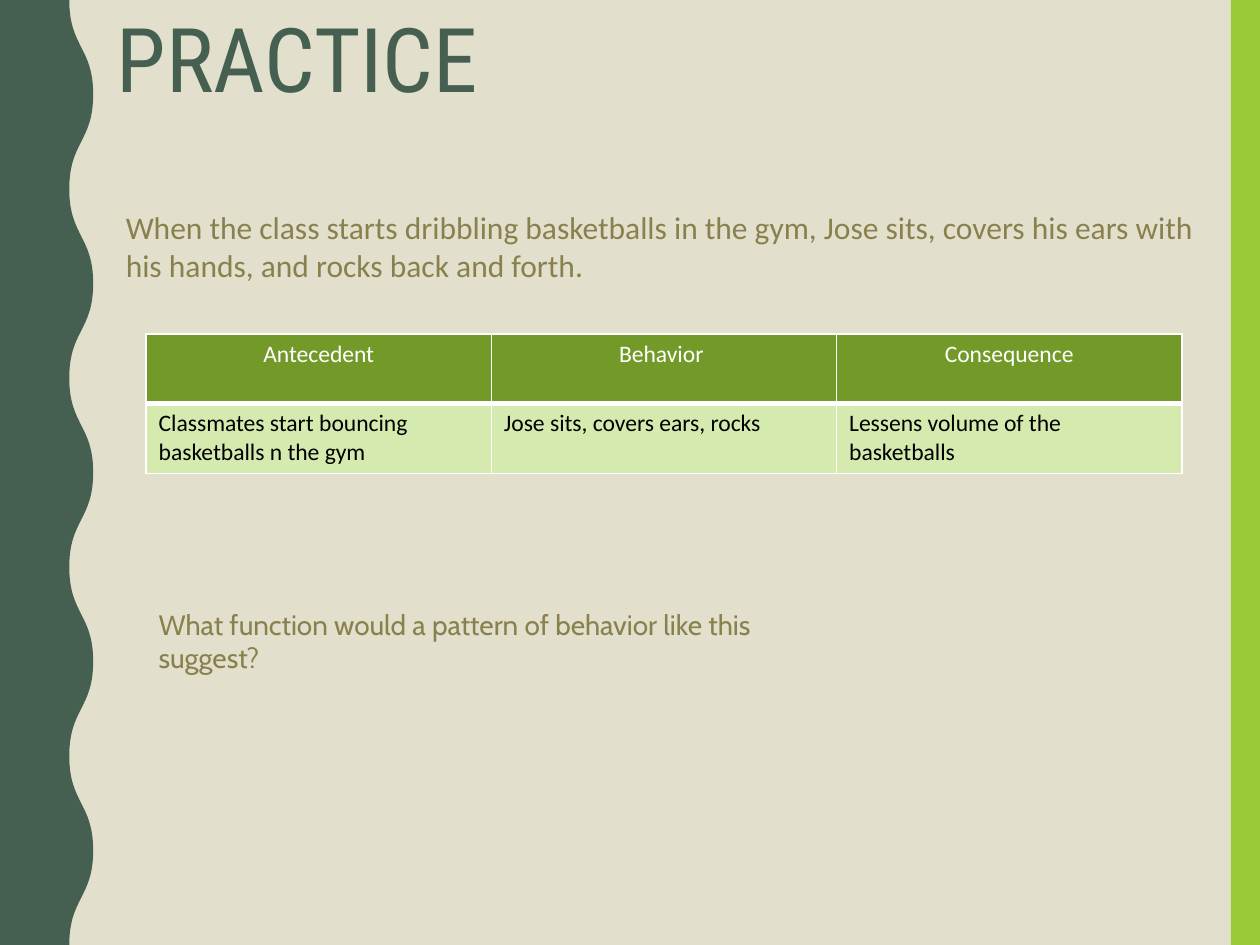
from lxml import etree
from pptx import Presentation
from pptx.dml.color import RGBColor
from pptx.enum import shapes, text
from pptx.oxml.ns import qn
from pptx.util import Inches, Pt

SLIDE_W, SLIDE_H = 10, 7.5
GREEN, LIME, OLIVE, WHITE = "455F51", "99CB38", "89814D", "FFFFFF"

# text, (left, top, width, height), size, font, colour, line spacing
TEXTS = [
    ("When the class starts dribbling basketballs in the gym, Jose sits, "
     "covers his ears with his hands, and rocks back and forth.",
     (0.9, 1.6, 8.74, 0.71), 18, "Calibri", OLIVE, None),
    ("What function would a pattern of behavior like this suggest?",
     (1.16, 4.77, 5.68, 0.37), 16, "Cabin", OLIVE, None),
    ("PRACTICE", (0.83, 0.07, 8.35, 1.63), 51, "Roboto Condensed", GREEN, 0.9),
]
ROWS = [
    ("Antecedent", "Behavior ", "Consequence"),
    ("Classmates start bouncing basketballs n the gym",
     "Jose sits, covers ears, rocks",
     "Lessens volume of the basketballs"),
]
# height, fill, font colour, alignment, bottom border width
ROW_STYLES = [
    (0.55, "739A28", WHITE, text.PP_ALIGN.CENTER, 3),
    (0.33, "D5EAAE", "000000", None, 1),
]
TABLE_LEFT, TABLE_TOP, COL_W = 1.16, 2.65, 2.74
WAVE_IN, WAVE_OUT, HALF_WAVE = 0.55, 0.74, 0.75


def rgb(value):
    return RGBColor.from_string(value)


def paint(sp, color):
    sp.shadow.inherit = False
    sp.fill.solid()
    sp.fill.fore_color.rgb = rgb(color)
    sp.line.fill.background()


def add_run(p, words, size, font, color):
    r = p.add_run()
    r.text = words
    r.font.size = Pt(size)
    r.font.name = font
    r.font.color.rgb = rgb(color)


def curve_slanted_sides(sp):
    """Turn each slanted side of a freeform into an upright S-curve."""
    x0 = y0 = 0
    for line in list(sp._element.iter(qn("a:lnTo"))):
        x, y = int(line[0].get("x")), int(line[0].get("y"))
        if x != x0 and y != y0:
            curve = etree.Element(qn("a:cubicBezTo"))
            middle = (y0 + y) // 2
            for px, py in ((x0, middle), (x, middle), (x, y)):
                etree.SubElement(curve, qn("a:pt"), x=str(px), y=str(py))
            line.getparent().replace(line, curve)
        x0, y0 = x, y


def set_borders(cell, bottom, top):
    tcPr = cell._tc.get_or_add_tcPr()
    widths = {"a:lnL": 1, "a:lnR": 1, "a:lnT": top, "a:lnB": bottom}
    for i, (tag, width) in enumerate(widths.items()):
        ln = etree.Element(qn(tag), w=str(Pt(width)))
        fill = etree.SubElement(ln, qn("a:solidFill"))
        etree.SubElement(fill, qn("a:srgbClr"), val=WHITE)
        tcPr.insert(i, ln)


prs = Presentation()
prs.slide_width, prs.slide_height = Inches(SLIDE_W), Inches(SLIDE_H)
s = prs.slides.add_slide(prs.slide_layouts[6])
s.background.fill.solid()
s.background.fill.fore_color.rgb = rgb("E2DFCC")

stripe = s.shapes.add_shape(shapes.MSO_SHAPE.RECTANGLE, Inches(9.77), 0,
                            Inches(0.23), Inches(SLIDE_H))
paint(stripe, LIME)

edge = [(Inches((WAVE_IN, WAVE_OUT)[i % 2]), Inches(i * HALF_WAVE))
        for i in range(round(SLIDE_H / HALF_WAVE) + 1)]
builder = s.shapes.build_freeform(0, 0)
builder.add_line_segments(edge + [(0, Inches(SLIDE_H))], close=True)
wave = builder.convert_to_shape()
curve_slanted_sides(wave)
paint(wave, GREEN)

table = s.shapes.add_table(
    len(ROWS), len(ROWS[0]), Inches(TABLE_LEFT), Inches(TABLE_TOP),
    Inches(COL_W * len(ROWS[0])),
    Inches(sum(style[0] for style in ROW_STYLES))).table
for col in table.columns:
    col.width = Inches(COL_W)
top = 1
for i, (row, style) in enumerate(zip(ROWS, ROW_STYLES)):
    height, fill, color, align, bottom = style
    table.rows[i].height = Inches(height)
    for j, words in enumerate(row):
        cell = table.cell(i, j)
        cell.fill.solid()
        cell.fill.fore_color.rgb = rgb(fill)
        set_borders(cell, bottom, top)
        p = cell.text_frame.paragraphs[0]
        p.alignment = align
        add_run(p, words, 13.5, "Calibri", color)
    top = bottom

for words, box, size, font, color, spacing in TEXTS:
    tf = s.shapes.add_textbox(*map(Inches, box)).text_frame
    tf.word_wrap = True
    p = tf.paragraphs[0]
    p.line_spacing = spacing
    add_run(p, words, size, font, color)

prs.save("out.pptx")
